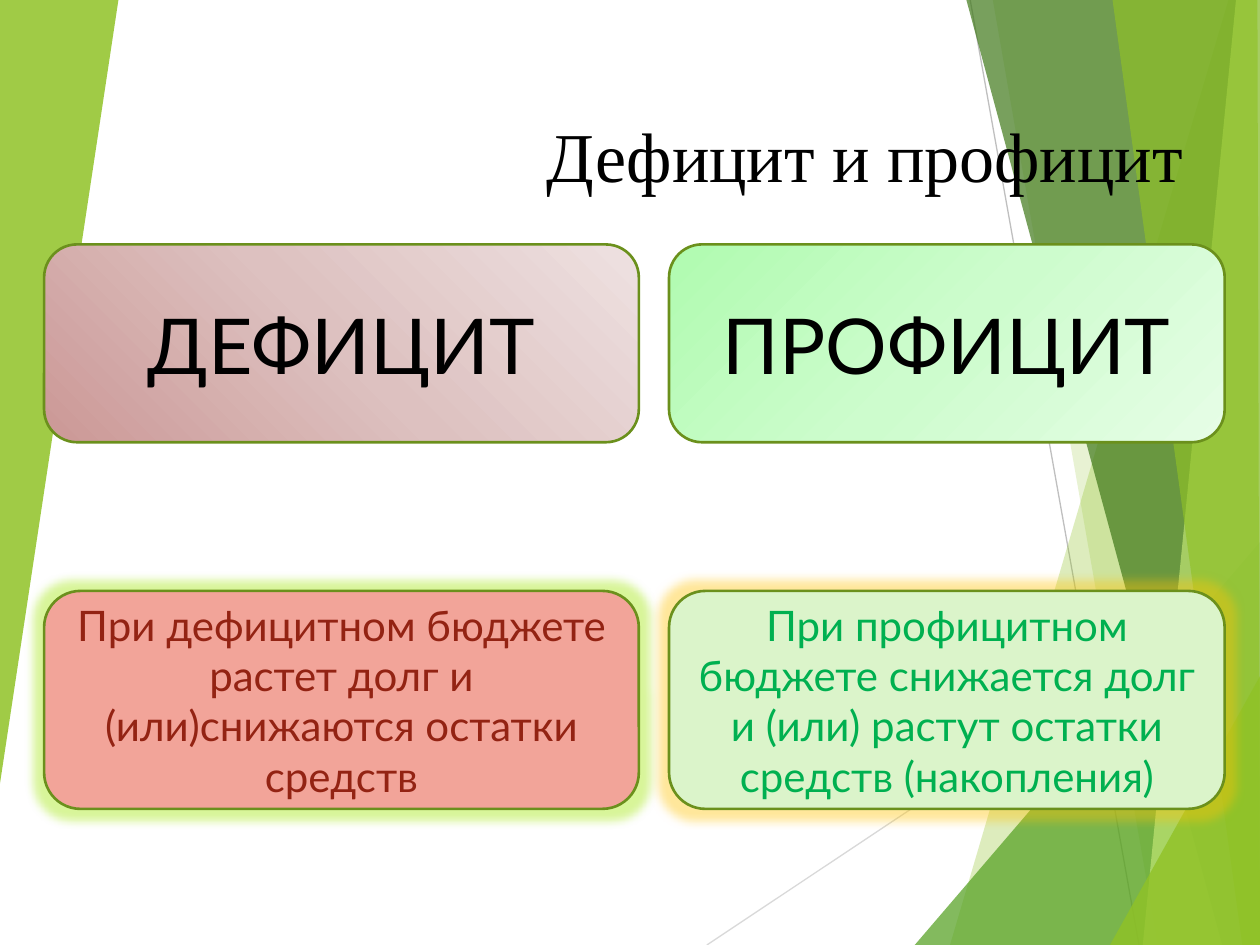
from copy import deepcopy

from lxml.etree import SubElement
from pptx import Presentation
from pptx.dml.color import RGBColor
from pptx.enum.shapes import MSO_CONNECTOR, MSO_SHAPE
from pptx.enum.text import MSO_ANCHOR, MSO_AUTO_SIZE, PP_ALIGN
from pptx.oxml.ns import qn
from pptx.util import Inches, Pt

BLACK = RGBColor(0x00, 0x00, 0x00)
LIGHT_GRAY = RGBColor(0xD9, 0xD9, 0xD9)
GRAY = RGBColor(0xBF, 0xBF, 0xBF)
LIME = RGBColor(0x90, 0xC2, 0x26)
GREEN = RGBColor(0x54, 0xA0, 0x21)
DARK_GREEN = RGBColor(0x3F, 0x78, 0x19)
PALE_LIME = RGBColor(0xC0, 0xE4, 0x74)
OUTLINE = RGBColor(0x6B, 0x90, 0x1C)
ROSE_SHADES = (RGBColor(0xCB, 0x98, 0x96), RGBColor(0xDD, 0xC1, 0xC0), RGBColor(0xEE, 0xE1, 0xE1))
MINT_SHADES = (RGBColor(0xB0, 0xFB, 0xB0), RGBColor(0xCD, 0xFC, 0xCD), RGBColor(0xE6, 0xFD, 0xE6))
SALMON = RGBColor(0xF2, 0xA4, 0x99)
DARK_RED = RGBColor(0x93, 0x23, 0x13)
PALE_GREEN = RGBColor(0xDB, 0xF4, 0xCA)
TEXT_GREEN = RGBColor(0x00, 0xB0, 0x50)
LIME_GLOW = RGBColor(0x9E, 0xE6, 0x02)
GOLD_GLOW = RGBColor(0xFF, 0xC3, 0x05)

FACETS = [
    ([(9.75, 0), (7.54, 7.5), (10.01, 7.5), (10.01, 0)], LIME, 30),
    ([(7.88, 0), (9.19, 7.5), (10.01, 7.5), (10.01, 0)], LIME, 20),
    ([(7.26, 7.5), (10.01, 4.29), (10.01, 7.5)], GREEN, 72),
    ([(7.67, 0), (9.7, 7.5), (10.01, 7.5), (10.01, 0)], DARK_GREEN, 70),
    ([(9.81, 0), (9.07, 7.5), (10.01, 7.5), (10.01, 0)], PALE_LIME, 70),
    ([(8.83, 0), (9.86, 7.5), (10, 7.5), (9.98, 0)], LIME, 65),
    ([(8.81, 7.5), (10.01, 5.35), (10.01, 7.5)], LIME, 80),
    ([(0, 0), (0.94, 0), (0, 6.22)], LIME, 85),
]
RAYS = [((5.61, 7.5), (10.01, 4.57), LIGHT_GRAY), ((7.7, 0), (9.04, 7.5), GRAY)]

HEADING_ROW = (1.94, 1.57)
DETAIL_ROW = (4.69, 1.73)


def set_alpha(color_element, percent):
    SubElement(color_element, qn("a:alpha"), val=str(percent * 1000))


def add_ray(slide, start, end, color):
    points = [Inches(value) for value in (*start, *end)]
    connector = slide.shapes.add_connector(MSO_CONNECTOR.STRAIGHT, *points)
    connector.line.color.rgb = color
    connector.line.width = Pt(0.75)
    SubElement(connector.element.spPr, qn("a:effectLst"))


def add_facet(slide, points, color, opacity):
    corners = [(Inches(x), Inches(y)) for x, y in points]
    builder = slide.shapes.build_freeform(*corners[0])
    builder.add_line_segments(corners[1:], close=True)
    shape = builder.convert_to_shape()
    shape.shadow.inherit = False
    shape.fill.solid()
    shape.fill.fore_color.rgb = color
    set_alpha(shape.element.spPr.find(".//" + qn("a:srgbClr")), opacity)
    shape.line.fill.background()


def add_backdrop(slide):
    for ray in RAYS:
        add_ray(slide, *ray)
    for facet in FACETS:
        add_facet(slide, *facet)


def place_title(slide, left, top, width, height):
    title = slide.shapes.title
    title.element.getparent().append(title.element)
    title.left, title.top = Inches(left), Inches(top)
    title.width, title.height = Inches(width), Inches(height)
    frame = title.text_frame
    frame.auto_size = MSO_AUTO_SIZE.NONE
    frame.vertical_anchor = MSO_ANCHOR.TOP
    frame.margin_top = Inches(0.53)
    write(frame, "Дефицит и профицит", PP_ALIGN.RIGHT, "Times New Roman", 40, BLACK)


def write(frame, text, alignment, font_name, size, color):
    frame.word_wrap = True
    paragraph = frame.paragraphs[0]
    paragraph.alignment = alignment
    run = paragraph.add_run()
    run.text = text
    run.font.name = font_name
    run.font.size = Pt(size)
    run.font.color.rgb = color


def add_card(slide, left, top, width, height, text, size, color):
    card = slide.shapes.add_shape(
        MSO_SHAPE.ROUNDED_RECTANGLE, Inches(left), Inches(top), Inches(width), Inches(height))
    card.shadow.inherit = False
    card.line.color.rgb = OUTLINE
    card.line.width = Pt(1.5)
    card.text_frame.vertical_anchor = MSO_ANCHOR.MIDDLE
    write(card.text_frame, text, PP_ALIGN.CENTER, "Lato", size, color)
    return card


def fill_gradient(card, shades, angle):
    card.fill.gradient()
    card.fill.gradient_angle = angle
    first_stop = card.element.spPr.find(".//" + qn("a:gs"))
    first_stop.addnext(deepcopy(first_stop))
    for stop, shade, position in zip(card.fill.gradient_stops, shades, (0, 0.5, 1)):
        stop.color.rgb = shade
        stop.position = position


def add_glow(card, color):
    effects = card.element.spPr.find(qn("a:effectLst"))
    glow = SubElement(effects, qn("a:glow"), rad=str(Inches(0.15)))
    set_alpha(SubElement(glow, qn("a:srgbClr"), val=str(color)), 40)


def add_column(slide, left, width, heading, shades, angle, detail, fill, text_color, glow):
    heading_card = add_card(slide, left, HEADING_ROW[0], width, HEADING_ROW[1], heading, 44, BLACK)
    fill_gradient(heading_card, shades, angle)
    detail_card = add_card(slide, left, DETAIL_ROW[0], width, DETAIL_ROW[1], detail, 24, text_color)
    detail_card.fill.solid()
    detail_card.fill.fore_color.rgb = fill
    add_glow(detail_card, glow)


def main():
    presentation = Presentation()
    presentation.slide_width = Inches(10)
    presentation.slide_height = Inches(7.5)
    slide = presentation.slides.add_slide(presentation.slide_layouts[5])
    add_backdrop(slide)
    place_title(slide, 0.43, 0.36, 9.06, 6.54)
    add_column(slide, 0.35, 4.72, "ДЕФИЦИТ", ROSE_SHADES, 45,
               "При дефицитном бюджете растет долг и (или)снижаются остатки средств",
               SALMON, DARK_RED, LIME_GLOW)
    add_column(slide, 5.31, 4.41, "ПРОФИЦИТ", MINT_SHADES, 315,
               "При профицитном бюджете снижается долг и (или) растут остатки средств (накопления)",
               PALE_GREEN, TEXT_GREEN, GOLD_GLOW)
    presentation.save("out.pptx")


if __name__ == "__main__":
    main()
